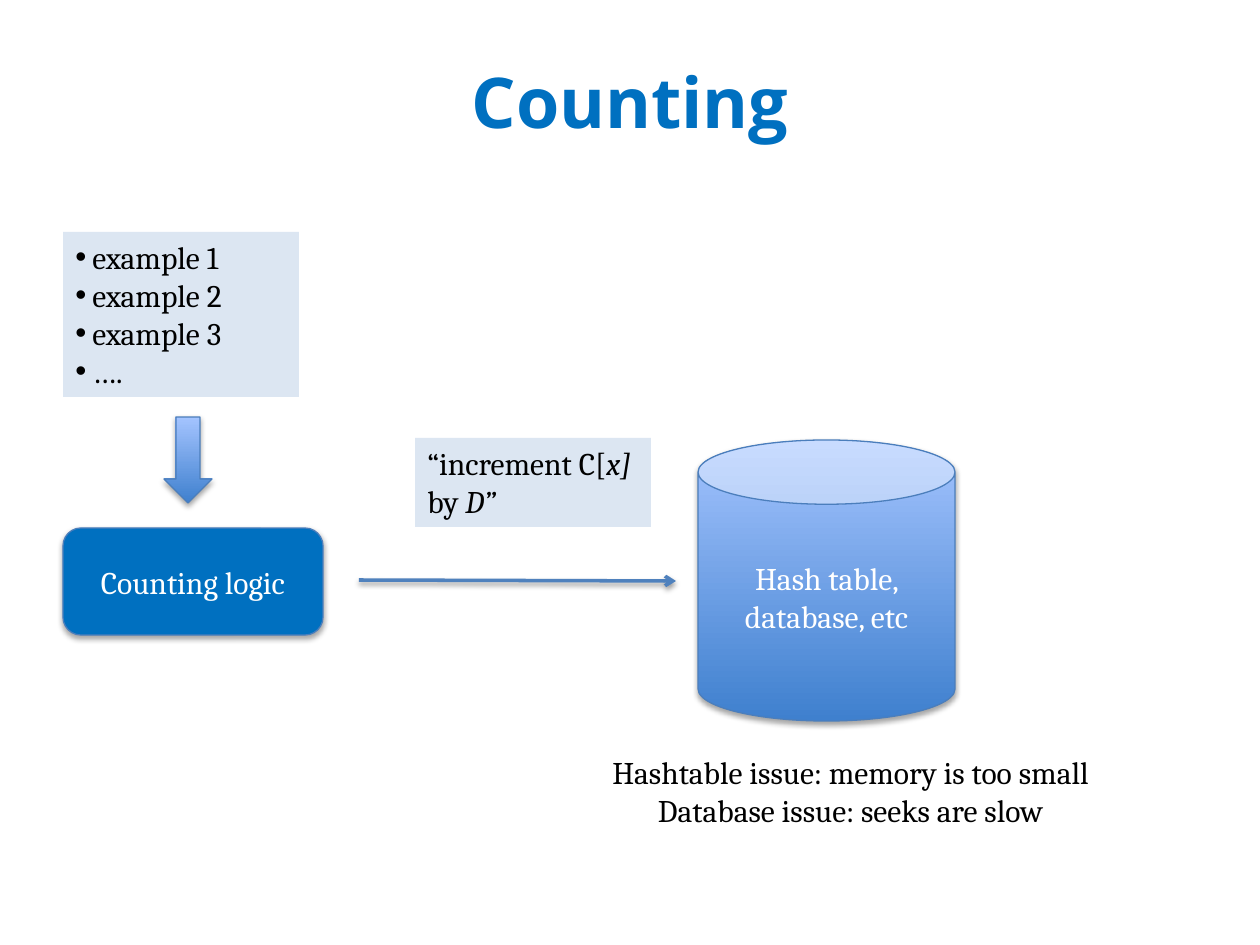
from lxml import etree
from pptx import Presentation
from pptx.dml.color import RGBColor
from pptx.enum.shapes import MSO_CONNECTOR, MSO_SHAPE
from pptx.enum.text import MSO_ANCHOR, PP_ALIGN
from pptx.oxml.ns import qn
from pptx.util import Pt

PX = 914400 / 126
CENTER, LEFT = PP_ALIGN.CENTER, PP_ALIGN.LEFT
MIDDLE = MSO_ANCHOR.MIDDLE
COLORS = {
    "blue": "0070C0", "panel": "DCE6F2", "outline": "4B7EBC", "arrow": "4F81BD",
    "deep": "3F80CE", "light": "A4C4FF", "black": "000000", "white": "FFFFFF",
}


def px(*lengths):
    return [round(n * PX) for n in lengths]


def write(frame, paragraphs, color, align):
    frame.word_wrap = True
    for i, runs in enumerate(paragraphs):
        paragraph = frame.paragraphs[0] if i == 0 else frame.add_paragraph()
        paragraph.alignment = align
        paragraph.font.name = "Cambria"
        paragraph.font.size = Pt(18)
        paragraph.font.color.rgb = RGBColor.from_string(COLORS[color])
        for text, italic in runs:
            run = paragraph.add_run()
            run.text = text
            if italic:
                run.font.italic = True


prs = Presentation()
prs.slide_width, prs.slide_height = px(1260, 945)
slide = prs.slides.add_slide(prs.slide_layouts[5])
shapes = slide.shapes

title = shapes.title
title.left, title.top, title.width, title.height = px(63, 38, 1134, 125)
title.text_frame.text = "Counting"
title.text_frame.vertical_anchor = MIDDLE
heading = title.text_frame.paragraphs[0]
heading.alignment = CENTER
heading.font.name = "Open Sans"
heading.font.size = Pt(40)
heading.font.bold = True
heading.font.color.rgb = RGBColor.from_string(COLORS["blue"])

examples = shapes.add_textbox(*px(63, 232, 236, 165))
lines = ["example 1", "example 2", "example 3", "…."]
write(examples.text_frame, [[(line, False)] for line in lines], "black", LEFT)
hang = px(17)[0]
for paragraph in examples.text_frame.paragraphs:
    properties = paragraph._p.get_or_add_pPr()
    properties.set("marL", str(hang))
    properties.set("indent", str(-hang))
    etree.SubElement(properties, qn("a:buFont")).set("typeface", "Arial")
    etree.SubElement(properties, qn("a:buChar")).set("char", "•")
    properties.append(properties.find(qn("a:defRPr")))

nodes = [
    (MSO_SHAPE.DOWN_ARROW, (164, 417, 48, 86), None, ""),
    (MSO_SHAPE.ROUNDED_RECTANGLE, (63, 528, 260, 107), "blue", "Counting logic"),
    (MSO_SHAPE.CAN, (698, 440, 257, 281), None, "Hash table, database, etc"),
]
for preset, box, solid, label in nodes:
    node = shapes.add_shape(preset, *px(*box))
    if solid:
        node.fill.solid()
        node.fill.fore_color.rgb = RGBColor.from_string(COLORS[solid])
    else:
        node.fill.gradient()
        node.fill.gradient_angle = 90
        for stop, position, color in zip(node.fill.gradient_stops, (0, 1), ("deep", "light")):
            stop.position = position
            stop.color.rgb = RGBColor.from_string(COLORS[color])
    node.line.color.rgb = RGBColor.from_string(COLORS["outline"])
    node.line.width = Pt(0.75)
    if label:
        node.text_frame.vertical_anchor = MIDDLE
        write(node.text_frame, [[(label, False)]], "white", CENTER)

update = shapes.add_connector(MSO_CONNECTOR.STRAIGHT, *px(359, 580, 676, 581))
update.line.color.rgb = RGBColor.from_string(COLORS["arrow"])
update.line.width = Pt(2)
etree.SubElement(update.line._get_or_add_ln(), qn("a:tailEnd")).set("type", "arrow")

message = shapes.add_textbox(*px(415, 438, 236, 89))
increment = [("“increment C[", False), ("x] ", True), ("by ", False), ("D”", True)]
write(message.text_frame, [increment], "black", LEFT)

for panel in (examples, message):
    panel.fill.solid()
    panel.fill.fore_color.rgb = RGBColor.from_string(COLORS["panel"])

issues = shapes.add_textbox(*px(521, 747, 659, 89))
concerns = ["Hashtable issue: memory is too small", "Database issue: seeks are slow"]
write(issues.text_frame, [[(concern, False)] for concern in concerns], "black", CENTER)

prs.save("out.pptx")
